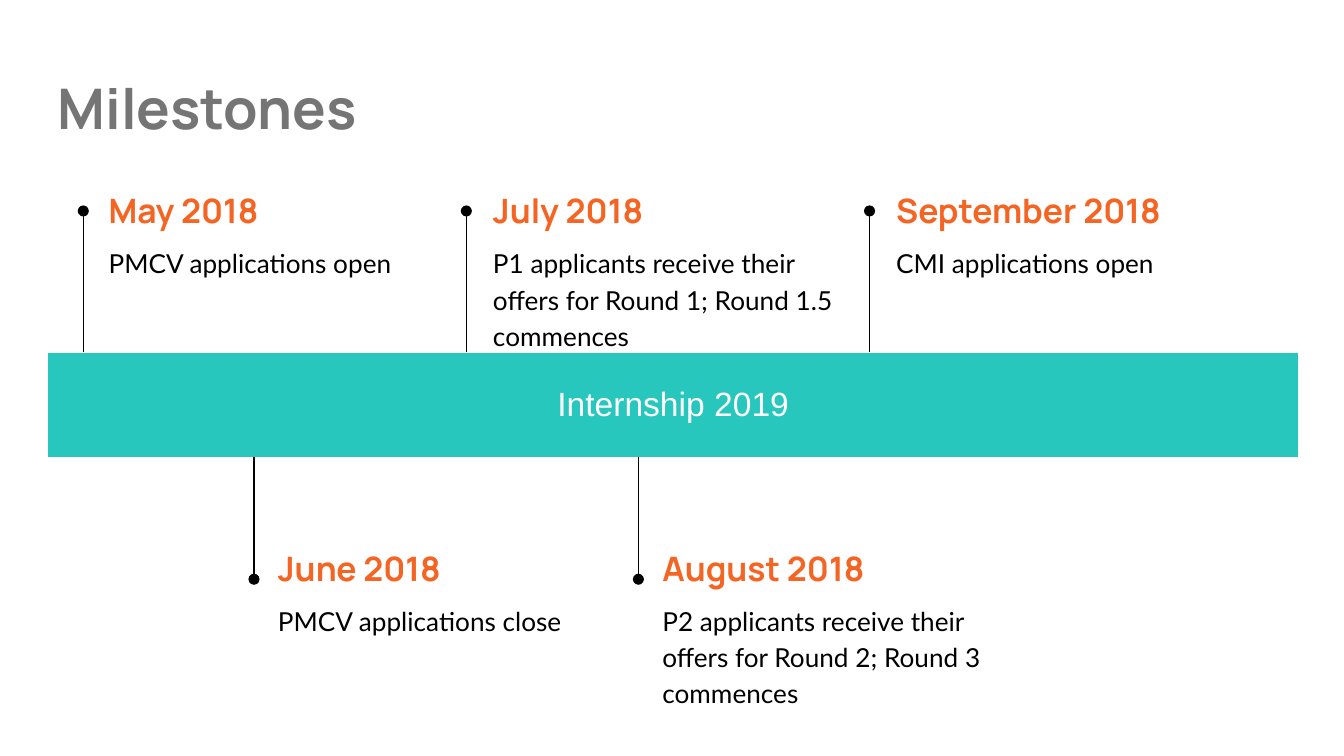
from lxml import etree
from pptx import Presentation
from pptx import util as u
from pptx.dml.color import RGBColor
from pptx.enum import shapes, text
from pptx.oxml.ns import qn

BLACK = RGBColor(0x00, 0x00, 0x00)
WHITE = RGBColor(0xFF, 0xFF, 0xFF)
GREY = RGBColor(0x75, 0x75, 0x75)
ORANGE = RGBColor(0xF4, 0x65, 0x24)
TEAL = RGBColor(0x27, 0xC7, 0xBD)

PX_PER_INCH = 100
WIDTH = 1000
INSET = 10
BAR_LEFT, BAR_TOP, BAR_WIDTH, BAR_HEIGHT = 35, 262, 932, 79
WIDE_COLUMNS = {3: 113, 4: 42}
COLUMN_COUNT = 12

UPPER = {"line_from": 262, "line_to": 157, "heading_top": 135}
LOWER = {"line_from": 340, "line_to": 431, "heading_top": 401}

MILESTONES = [
    (UPPER, 62, 71, 253, 253, "May 2018", "PMCV applications open"),
    (LOWER, 189, 197, 253, 253, "June 2018", "PMCV applications close"),
    (UPPER, 347, 357, 257, 287, "July 2018",
     "P1 applicants receive their offers for Round 1; Round 1.5 commences"),
    (LOWER, 475, 483, 257, 257, "August 2018",
     "P2 applicants receive their offers for Round 2; Round 3 commences"),
    (UPPER, 647, 657, 257, 287, "September 2018", "CMI applications open"),
]


def px(length):
    return u.Emu(round(length * u.Inches(1) / PX_PER_INCH))


def write(frame, words, font, size, color, bold=False, align=None, spacing=None):
    paragraph = frame.paragraphs[0]
    paragraph.alignment = align
    paragraph.line_spacing = spacing
    run = paragraph.add_run()
    run.text = words
    run.font.name = font
    run.font.size = u.Pt(size)
    run.font.bold = bold
    run.font.color.rgb = color


class Timeline:
    heading_font = "Manrope"
    body_font = "Lato"
    bar_font = "Arial"

    def __init__(self, slide):
        self.slide = slide

    def label(self, left, top, width, height, words,
              anchor=text.MSO_ANCHOR.TOP, **style):
        box = self.slide.shapes.add_textbox(px(left), px(top), px(width), px(height))
        frame = box.text_frame
        frame.word_wrap = True
        frame.vertical_anchor = anchor
        frame.margin_left = frame.margin_right = px(INSET)
        frame.margin_top = frame.margin_bottom = px(INSET)
        write(frame, words, **style)

    def bar(self, words):
        table = self.slide.shapes.add_table(
            1, COLUMN_COUNT, px(BAR_LEFT), px(BAR_TOP), px(BAR_WIDTH), px(BAR_HEIGHT)
        ).table
        narrow = (BAR_WIDTH - sum(WIDE_COLUMNS.values())) / (COLUMN_COUNT - len(WIDE_COLUMNS))
        for index, column in enumerate(table.columns):
            column.width = px(WIDE_COLUMNS.get(index, narrow))
        for cell in table.iter_cells():
            cell.fill.solid()
            cell.fill.fore_color.rgb = TEAL
        period = table.cell(0, 0)
        period.merge(table.cell(0, COLUMN_COUNT - 1))
        period.vertical_anchor = text.MSO_ANCHOR.MIDDLE
        period.margin_left = period.margin_right = px(INSET)
        period.margin_top = period.margin_bottom = px(INSET)
        write(period.text_frame, words, font=self.bar_font, size=18, color=WHITE,
              align=text.PP_ALIGN.CENTER)

    def pin(self, x, start, end):
        stem = self.slide.shapes.add_connector(
            shapes.MSO_CONNECTOR.STRAIGHT, px(x), px(start), px(x), px(end))
        stem.line.color.rgb = BLACK
        stem.line.width = u.Pt(0.75)
        outline = stem.line._get_or_add_ln()
        etree.SubElement(outline, qn("a:tailEnd"), type="oval")
        etree.SubElement(stem._element.spPr, qn("a:effectLst"))

    def milestone(self, side, pin_x, left, heading_width, body_width, month, event):
        top = side["heading_top"]
        self.pin(pin_x, side["line_from"], side["line_to"])
        self.label(left, top, heading_width, 43, month, anchor=text.MSO_ANCHOR.MIDDLE,
                   font=self.heading_font, size=18, color=ORANGE, bold=True)
        self.label(left, top + 36, body_width, 63, event,
                   font=self.body_font, size=14, color=BLACK, spacing=1.15)


def main():
    deck = Presentation()
    deck.slide_width = px(WIDTH)
    deck.slide_height = px(WIDTH * 9 / 16)
    timeline = Timeline(deck.slides.add_slide(deck.slide_layouts[6]))
    timeline.label(33, 45, 932, 70, "Milestones",
                   font=timeline.heading_font, size=30, color=GREY, bold=True)
    timeline.bar("Internship 2019")
    for milestone in MILESTONES:
        timeline.milestone(*milestone)
    deck.save("out.pptx")


if __name__ == "__main__":
    main()
